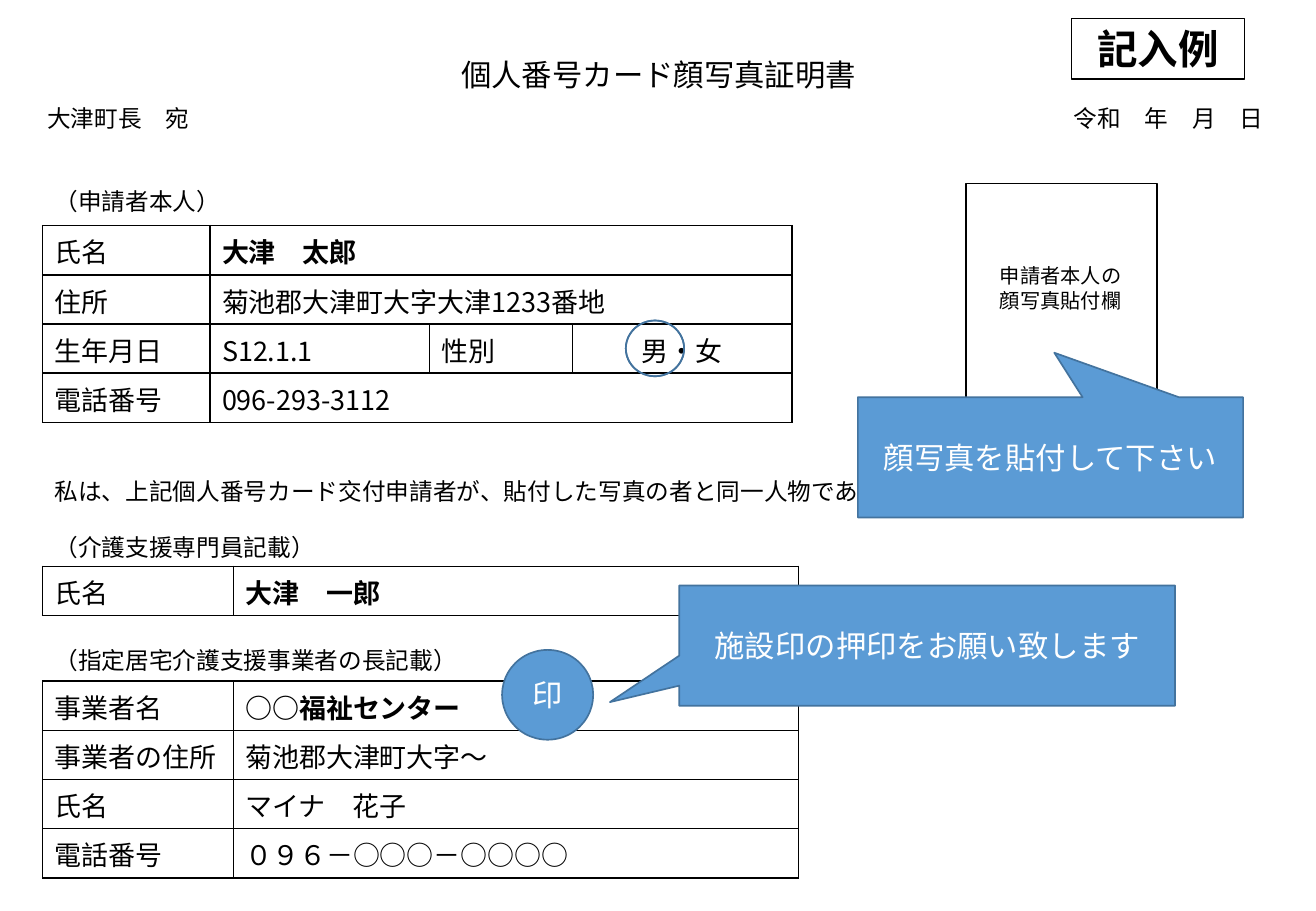
from dataclasses import dataclass

from lxml.etree import SubElement
from pptx import Presentation
from pptx.dml.color import RGBColor
from pptx.enum.shapes import MSO_SHAPE as Shape
from pptx.enum.text import MSO_ANCHOR as Anchor, PP_ALIGN as Align
from pptx.oxml.ns import qn
from pptx.util import Inches, Pt

BLACK = RGBColor(0x00, 0x00, 0x00)
WHITE = RGBColor(0xFF, 0xFF, 0xFF)
BLUE = RGBColor(0x5B, 0x9B, 0xD5)
DARK_BLUE = RGBColor(0x43, 0x73, 0x9E)
JAPANESE = "Noto Sans CJK JP"
LATIN = "Calibri"
SLIDE_WIDTH, SLIDE_HEIGHT = Inches(10.83), Inches(7.5)
ROW_HEIGHT = SLIDE_HEIGHT * 0.054
HEADING_HEIGHT = SLIDE_HEIGHT * 0.045


@dataclass
class Box:
    left: float
    top: float
    width: float
    height: float

    def area(self, left, top, width, height):
        return Box(self.left + self.width * left / 100,
                   self.top + self.height * top / 100,
                   self.width * width / 100, self.height * height / 100)

    def frame(self):
        return [round(n) for n in (self.left, self.top, self.width, self.height)]


def write(text_frame, lines, size, color=BLACK, bold=False, align=Align.LEFT, font=JAPANESE):
    for index, line in enumerate(lines):
        paragraph = text_frame.add_paragraph() if index else text_frame.paragraphs[0]
        paragraph.alignment = align
        run = paragraph.add_run()
        run.text = line
        run.font.size = Pt(size)
        run.font.bold = bold
        run.font.color.rgb = color
        run.font.name = font
        east_asian = SubElement(run._r.get_or_add_rPr(), qn("a:ea"))
        east_asian.set("typeface", JAPANESE)


def add_text(slide, box, lines, size, align=Align.LEFT, wrap=True):
    shape = slide.shapes.add_textbox(*box.frame())
    shape.text_frame.word_wrap = wrap
    write(shape.text_frame, lines, size, align=align)


def add_figure(slide, kind, box, fill=None, line=BLACK, line_width=1, adjustments=()):
    shape = slide.shapes.add_shape(kind, *box.frame())
    shape.shadow.inherit = False
    if fill is None:
        shape.fill.background()
    else:
        shape.fill.solid()
        shape.fill.fore_color.rgb = fill
    shape.line.color.rgb = line
    shape.line.width = Pt(line_width)
    for index, value in enumerate(adjustments):
        shape.adjustments[index] = value
    return shape


def add_blue_label(slide, kind, box, text, adjustments=()):
    shape = add_figure(slide, kind, box, BLUE, DARK_BLUE, adjustments=adjustments)
    shape.text_frame.word_wrap = True
    shape.text_frame.vertical_anchor = Anchor.MIDDLE
    write(shape.text_frame, [text], 18, WHITE, align=Align.CENTER, font=LATIN)


def style_cell(cell):
    properties = cell._tc.get_or_add_tcPr()
    for side in ("lnL", "lnR", "lnT", "lnB"):
        border = SubElement(properties, qn(f"a:{side}"), w=str(Pt(1)))
        solid = SubElement(border, qn("a:solidFill"))
        SubElement(solid, qn("a:srgbClr"), val=str(BLACK))
    cell.fill.solid()
    cell.fill.fore_color.rgb = WHITE


def form_section(slide, box, heading, column_weights, rows, bold_value):
    add_text(slide, Box(box.left, box.top, box.width, HEADING_HEIGHT), [heading], 14)
    height = ROW_HEIGHT * len(rows)
    table_box = Box(box.left, box.top + box.height - height, box.width, height)
    columns = len(column_weights)
    table = slide.shapes.add_table(len(rows), columns, *table_box.frame()).table
    table.first_row = table.horz_banding = False
    for column, weight in zip(table.columns, column_weights):
        column.width = round(box.width * weight / sum(column_weights))
    for row_index, values in enumerate(rows):
        table.rows[row_index].height = round(ROW_HEIGHT)
        for column_index in range(columns):
            style_cell(table.cell(row_index, column_index))
        if len(values) < columns:
            table.cell(row_index, len(values) - 1).merge(table.cell(row_index, columns - 1))
        for column_index, value in enumerate(values):
            write(table.cell(row_index, column_index).text_frame, [value], 16,
                  bold=value == bold_value,
                  align=Align.CENTER if column_index == 3 else Align.LEFT)


def header(slide, box):
    add_text(slide, box.area(33.7, 34.2, 32.7, 33.3), ["個人番号カード顔写真証明書"], 18, Align.CENTER)
    add_text(slide, box.area(2.68, 67.5, 32.7, 28.3), ["大津町長　宛"], 14)
    add_text(slide, box.area(80.7, 67.5, 17.64, 28.3), ["令和　年　月　日"], 14)
    example = add_figure(slide, Shape.RECTANGLE, box.area(81.44, 12.5, 13.11, 41.7), line_width=0.75)
    example.text_frame.vertical_anchor = Anchor.TOP
    write(example.text_frame, ["記入例"], 24, bold=True, align=Align.CENTER)


def photo_area(slide, box):
    add_figure(slide, Shape.RECTANGLE, box)
    add_text(slide, box.area(11.5, 31, 77.7, 25.4), ["申請者本人の", "顔写真貼付欄"], 12, wrap=False)


def applicant(slide, box):
    form_section(slide, box, "（申請者本人）", (1.38, 1.81, 1.18, 1.81), [
        ("氏名", "大津　太郎"),
        ("住所", "菊池郡大津町大字大津1233番地"),
        ("生年月日", "S12.1.1", "性別", "男・女"),
        ("電話番号", "096-293-3112"),
    ], "大津　太郎")
    add_figure(slide, Shape.DONUT, box.area(77.8, 57.8, 7.78, 23.1), BLUE, DARK_BLUE, adjustments=(0,))


def care_manager(slide, box):
    form_section(slide, box, "（介護支援専門員記載）", (1.57, 4.65),
                 [("氏名", "大津　一郎")], "大津　一郎")


def provider(slide, box):
    form_section(slide, box, "（指定居宅介護支援事業者の長記載）", (1.57, 4.65), [
        ("事業者名", "○○福祉センター"),
        ("事業者の住所", "菊池郡大津町大字～"),
        ("氏名", "マイナ　花子"),
        ("電話番号", "０９６－○○○－○○○○"),
    ], "○○福祉センター")
    add_blue_label(slide, Shape.FLOWCHART_CONNECTOR, box.area(60.8, 4.1, 12.06, 37.8), "印")


def guidance(slide, box):
    add_blue_label(slide, Shape.RECTANGULAR_CALLOUT, box.area(51.62, 64.27, 37.67, 13.2),
                   "施設印の押印をお願い致します", (-0.64, 0.47))
    add_blue_label(slide, Shape.RECTANGULAR_CALLOUT, box.area(65.19, 43.6, 29.27, 13.2),
                   "顔写真を貼付して下さい", (0.01, -0.87))


def main():
    presentation = Presentation()
    presentation.slide_width, presentation.slide_height = SLIDE_WIDTH, SLIDE_HEIGHT
    slide = presentation.slides.add_slide(presentation.slide_layouts[6])
    page = Box(0, 0, SLIDE_WIDTH, SLIDE_HEIGHT)
    header(slide, page.area(0, 0, 100, 16))
    photo_area(slide, page.area(73.41, 20.13, 14.5, 26.27))
    add_text(slide, page.area(3.23, 51.73, 83.66, 7.6),
             ["私は、上記個人番号カード交付申請者が、貼付した写真の者と同一人物であることを証明します。"], 14)
    applicant(slide, page.area(3.23, 19.87, 56.97, 26.5))
    care_manager(slide, page.area(3.23, 57.87, 57.43, 9.7))
    provider(slide, page.area(3.23, 70.27, 57.43, 26.1))
    guidance(slide, page)
    presentation.save("out.pptx")


if __name__ == "__main__":
    main()
